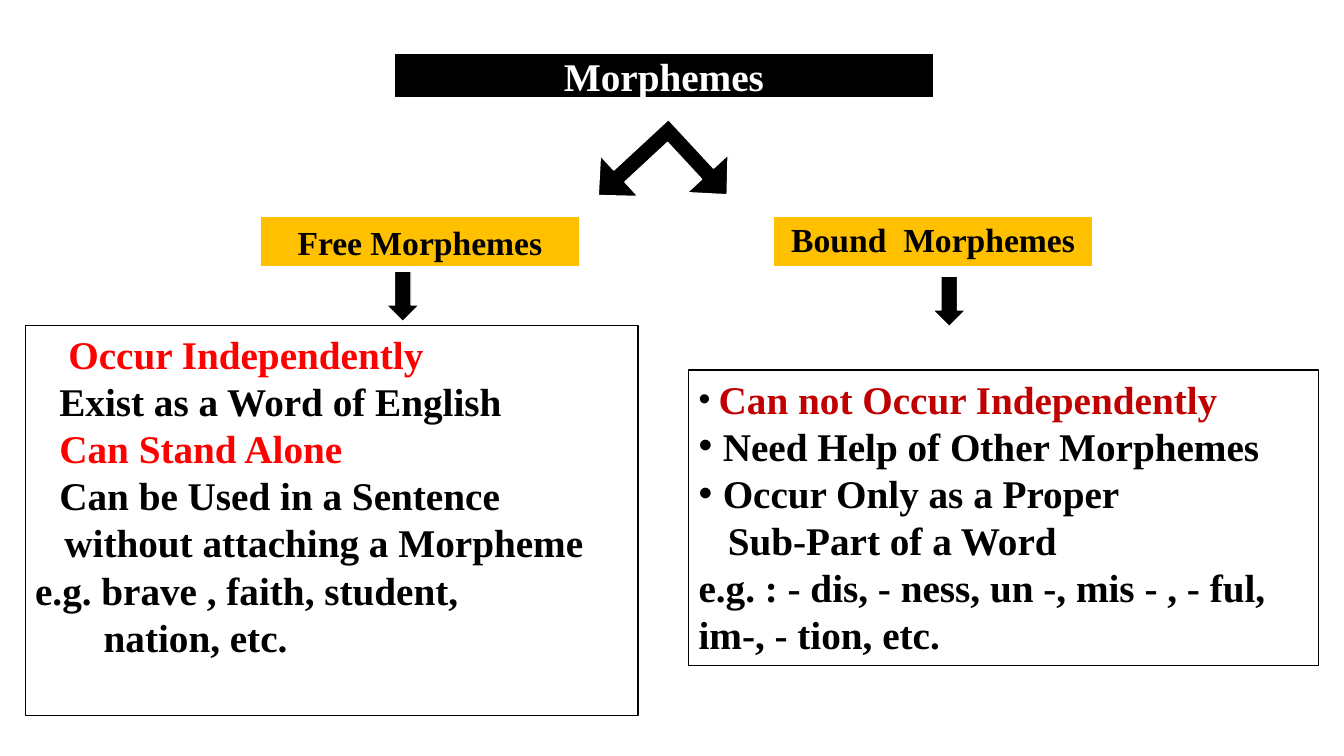
from dataclasses import dataclass

import pptx
import pptx.dml.color
import pptx.enum.shapes
import pptx.enum.text
import pptx.oxml.ns
import pptx.util
from lxml import etree

Inches = pptx.util.Inches
Pt = pptx.util.Pt
RGBColor = pptx.dml.color.RGBColor
Preset = pptx.enum.shapes.MSO_SHAPE
Align = pptx.enum.text.PP_ALIGN
Anchor = pptx.enum.text.MSO_ANCHOR

BLACK = RGBColor(0x00, 0x00, 0x00)
WHITE = RGBColor(0xFF, 0xFF, 0xFF)
AMBER = RGBColor(0xFF, 0xC0, 0x00)
RED = RGBColor(0xFF, 0x00, 0x00)
DARK_RED = RGBColor(0xC0, 0x00, 0x00)
FONT = "Times New Roman"


@dataclass
class Box:
    left: float
    top: float
    width: float
    height: float


@dataclass
class Heading:
    text: str
    box: Box
    size: int
    fill: RGBColor
    color: RGBColor
    outline: RGBColor | None = None
    line_spacing: float = 1.0


@dataclass
class Line:
    text: str
    indent: float = 0
    color: RGBColor = BLACK
    bullet_percent: int = 0


@dataclass
class Panel:
    box: Box
    lines: list[Line]


@dataclass
class Arrow:
    preset: Preset
    box: Box
    rotation: float = 0


HEADINGS = [
    Heading("Morphemes", Box(3.92, 0.54, 5.33, 0.42), 28, BLACK, WHITE),
    Heading("Free Morphemes", Box(2.58, 2.15, 3.17, 0.5), 24, AMBER, BLACK, WHITE),
    Heading("Bound  Morphemes", Box(7.67, 2.15, 3.17, 0.5), 24, AMBER, BLACK, WHITE, 0.9),
]

ARROWS = [
    Arrow(Preset.LEFT_UP_ARROW, Box(6.01, 1.13, 1.14, 1.22), 227.2),
    Arrow(Preset.DOWN_ARROW, Box(3.83, 2.69, 0.33, 0.5)),
    Arrow(Preset.DOWN_ARROW, Box(9.25, 2.74, 0.33, 0.5)),
]

PANELS = [
    Panel(Box(0.25, 3.23, 6.08, 3.87), [
        Line("Occur Independently", 0.33, RED),
        Line("Exist as a Word of English", 0.24),
        Line("Can Stand Alone", 0.24, RED),
        Line("Can be Used in a Sentence", 0.24),
        Line("without attaching a Morpheme", 0.29),
        Line("e.g. brave , faith, student,"),
        Line("nation, etc.", 0.68),
    ]),
    Panel(Box(6.83, 3.67, 6.25, 2.93), [
        Line("Can not Occur Independently", 0.2, DARK_RED, 86),
        Line("Need Help of Other Morphemes", 0.24, BLACK, 100),
        Line("Occur Only as a Proper", 0.24, BLACK, 100),
        Line("Sub-Part of a Word", 0.29),
        Line("e.g. : - dis, - ness, un -, mis - , - ful, im-, - tion, etc."),
    ]),
]


def add_block(slide, preset: Preset, box: Box, fill: RGBColor, outline: RGBColor | None):
    shape = slide.shapes.add_shape(
        preset, Inches(box.left), Inches(box.top), Inches(box.width), Inches(box.height))
    shape.shadow.inherit = False
    shape.fill.solid()
    shape.fill.fore_color.rgb = fill
    if outline is None:
        shape.line.fill.background()
    else:
        shape.line.color.rgb = outline
        shape.line.width = Pt(1)
    return shape


def add_text(paragraph, text: str, size: int, color: RGBColor) -> None:
    run = paragraph.add_run()
    run.text = text
    run.font.name = FONT
    run.font.size = Pt(size)
    run.font.bold = True
    run.font.color.rgb = color


def set_indent(paragraph, line: Line) -> None:
    qn = pptx.oxml.ns.qn
    properties = paragraph._p.get_or_add_pPr()
    properties.set("marL", str(Inches(line.indent)))
    if not line.bullet_percent:
        return
    properties.set("indent", str(-Inches(line.indent)))
    color = etree.SubElement(properties, qn("a:buClr"))
    etree.SubElement(color, qn("a:srgbClr"), val=str(BLACK))
    etree.SubElement(properties, qn("a:buSzPct"), val=str(line.bullet_percent * 1000))
    etree.SubElement(properties, qn("a:buFont"), typeface="Arial")
    etree.SubElement(properties, qn("a:buChar"), char="•")


def draw_heading(slide, heading: Heading) -> None:
    shape = add_block(slide, Preset.FLOWCHART_PROCESS, heading.box, heading.fill, heading.outline)
    shape.text_frame.vertical_anchor = Anchor.MIDDLE
    paragraph = shape.text_frame.paragraphs[0]
    paragraph.alignment = Align.CENTER
    paragraph.line_spacing = heading.line_spacing
    add_text(paragraph, heading.text, heading.size, heading.color)


def draw_arrow(slide, arrow: Arrow) -> None:
    shape = add_block(slide, arrow.preset, arrow.box, BLACK, WHITE)
    shape.rotation = arrow.rotation
    if arrow.preset == Preset.LEFT_UP_ARROW:
        for index, value in enumerate((0.142, 0.243, 0.25)):
            shape.adjustments[index] = value


def draw_panel(slide, panel: Panel) -> None:
    shape = add_block(slide, Preset.RECTANGLE, panel.box, WHITE, BLACK)
    frame = shape.text_frame
    frame.word_wrap = True
    frame.vertical_anchor = Anchor.TOP
    for index, line in enumerate(panel.lines):
        paragraph = frame.add_paragraph() if index else frame.paragraphs[0]
        paragraph.alignment = Align.LEFT
        set_indent(paragraph, line)
        add_text(paragraph, line.text, 28, line.color)


def main() -> None:
    presentation = pptx.Presentation()
    presentation.slide_width = Inches(13.33)
    presentation.slide_height = Inches(7.5)
    slide = presentation.slides.add_slide(presentation.slide_layouts[6])

    # Title and the two branches
    for heading in HEADINGS:
        draw_heading(slide, heading)

    # Descriptions of each branch
    for panel in PANELS:
        draw_panel(slide, panel)

    # Arrows between the levels
    for arrow in ARROWS:
        draw_arrow(slide, arrow)

    presentation.save("out.pptx")


if __name__ == "__main__":
    main()
